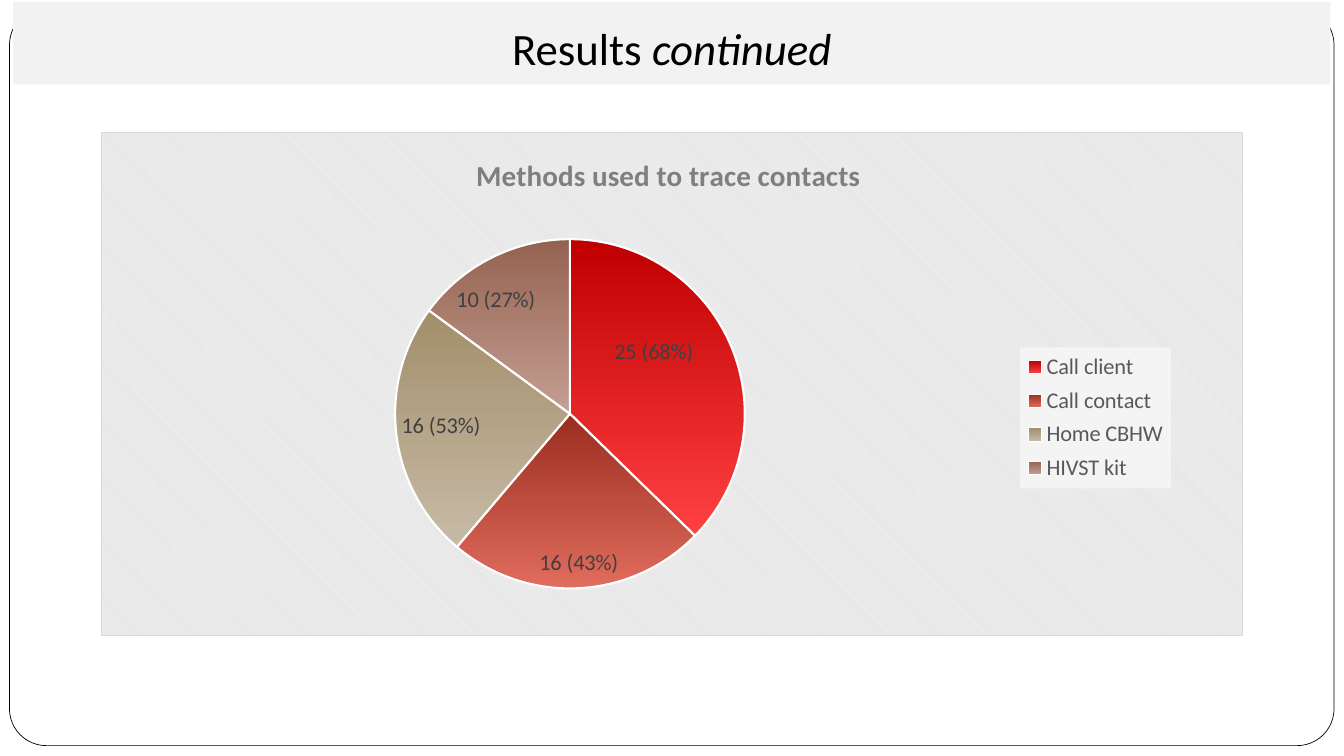
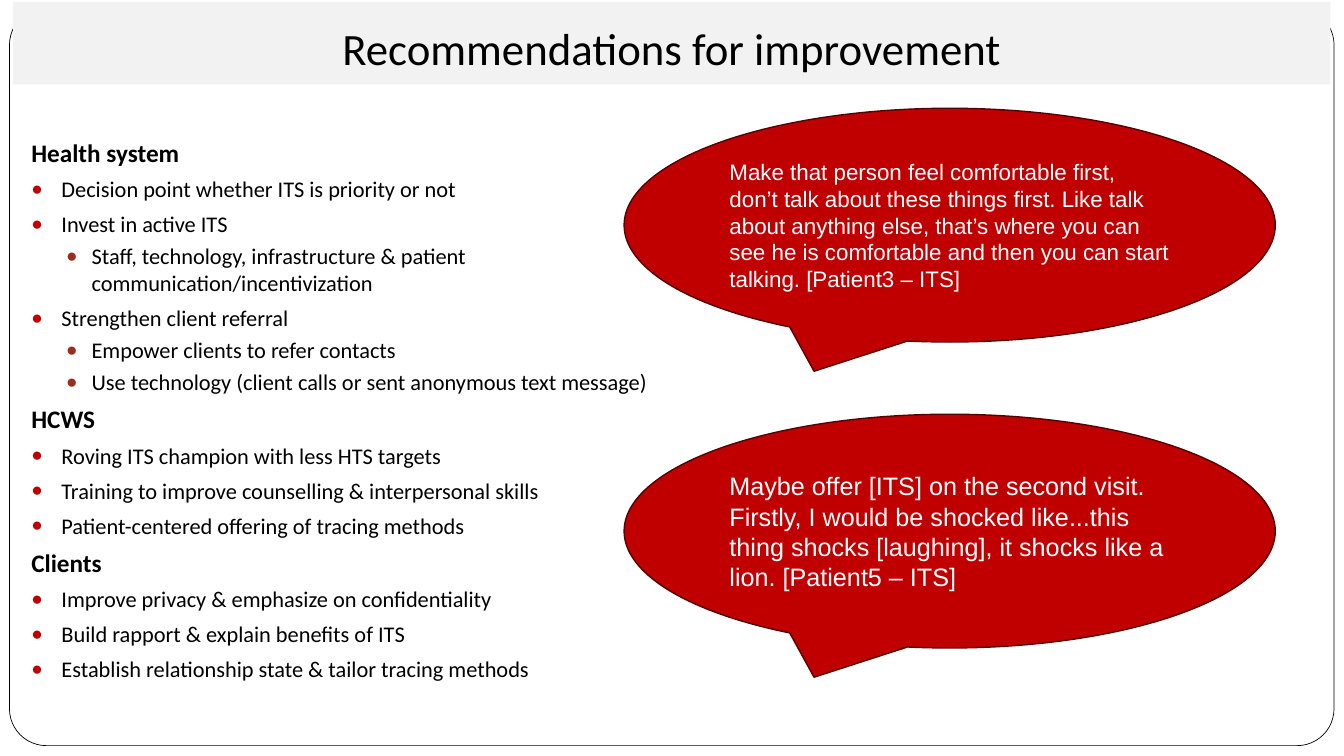
"""Build two slides on contact tracing results and recommendations."""
from dataclasses import dataclass

from lxml import etree
from pptx import Presentation
from pptx import util as u
from pptx.chart.data import CategoryChartData
from pptx.dml.color import RGBColor
from pptx.enum import chart as charts, shapes, text
from pptx.oxml import parse_xml
from pptx.oxml.ns import nsdecls, qn


@dataclass(frozen=True)
class Theme:
    font: str = "Calibri"
    quote_font: str = "Arial"
    bullet_font: str = "Arial"
    black: str = "000000"
    white: str = "FFFFFF"
    band: str = "F2F2F2"
    red: str = "C00000"
    brick: str = "9B2D1F"
    callout_line: str = "540000"
    chart_back: str = "E6E6E6"
    chart_border: str = "D9D9D9"
    chart_title: str = "7F7F7F"
    legend_back: str = "F4F4F4"
    legend_text: str = "595959"
    label_text: str = "404040"
    slices: tuple = (("C00000", "FF4040"), ("9B2D1F", "DF6C5D"),
                     ("A28E6A", "C7BBA6"), ("956251", "C49F92"))
    title_size: int = 32
    chart_title_size: float = 20.8
    heading_size: int = 18
    body_size: int = 16


def style_font(font, size, color, name, bold=False, italic=False):
    font.size, font.name = u.Pt(size), name
    font.bold, font.italic = bold, italic
    font.color.rgb = RGBColor.from_string(color)


def add_run(p, content, **fmt):
    r = p.add_run()
    r.text = content
    style_font(r.font, **fmt)


def add_bullet(p, font, color, left, hanging):
    pPr = p._p.get_or_add_pPr()
    pPr.set("marL", str(u.Cm(left)))
    pPr.set("indent", str(-u.Cm(hanging)))
    bu_color = etree.SubElement(pPr, qn("a:buClr"))
    etree.SubElement(bu_color, qn("a:srgbClr")).set("val", color)
    etree.SubElement(pPr, qn("a:buSzPct")).set("val", "85000")
    etree.SubElement(pPr, qn("a:buFont")).set("typeface", font)
    etree.SubElement(pPr, qn("a:buChar")).set("char", "●")


def place(parent, size, after=None, inner=False, edge=True, **lengths):
    for old in parent.findall(qn("c:layout")):
        parent.remove(old)
    layout = etree.Element(qn("c:layout"))
    manual = etree.SubElement(layout, qn("c:manualLayout"))
    if inner:
        etree.SubElement(manual, qn("c:layoutTarget")).set("val", "inner")
    if edge:
        for mode in ("xMode", "yMode"):
            etree.SubElement(manual, qn(f"c:{mode}")).set("val", "edge")
    for key, value in lengths.items():
        fraction = value / size[key in "yh"]
        etree.SubElement(manual, qn(f"c:{key}")).set("val", f"{fraction:.4f}")
    if after:
        parent.find(qn(after)).addnext(layout)
    else:
        parent.insert(0, layout)


def chart_fill(content):
    return parse_xml(f'<c:spPr {nsdecls("c", "a")}>{content}</c:spPr>')


def rgb_xml(color):
    return f'<a:srgbClr val="{color}"/>'


class Deck:
    def __init__(self, theme):
        self.theme = theme
        self.prs = Presentation()
        self.prs.slide_width, self.prs.slide_height = u.Cm(33.87), u.Cm(19.05)
        self.s = None

    def shape(self, kind, box, fill, line=None, width=0.5):
        sp = self.s.shapes.add_shape(kind, *map(u.Cm, box))
        sp.shadow.inherit = False
        sp.fill.solid()
        sp.fill.fore_color.rgb = RGBColor.from_string(fill)
        if line:
            sp.line.color.rgb = RGBColor.from_string(line)
            sp.line.width = u.Pt(width)
        else:
            sp.line.fill.background()
        sp.text_frame.word_wrap = True
        return sp

    def slide(self, title, emphasis=None):
        t = self.theme
        self.s = self.prs.slides.add_slide(self.prs.slide_layouts[6])
        frame = self.shape(shapes.MSO_SHAPE.ROUNDED_RECTANGLE,
                           (0.24, 0.2, 33.38, 18.59), t.white, t.black)
        frame.adjustments[0] = 0.05
        tf = self.shape(shapes.MSO_SHAPE.RECTANGLE,
                        (0.33, 0.05, 33.2, 2.08), t.band).text_frame
        tf.vertical_anchor = text.MSO_ANCHOR.BOTTOM
        tf.margin_bottom = u.Cm(0.25)
        p = tf.paragraphs[0]
        p.alignment = text.PP_ALIGN.CENTER
        fmt = dict(size=t.title_size, color=t.black, name=t.font)
        add_run(p, title, **fmt)
        if emphasis:
            add_run(p, emphasis, italic=True, **fmt)

    def outline(self, box, sections):
        t = self.theme
        tf = self.s.shapes.add_textbox(*map(u.Cm, box)).text_frame
        tf.word_wrap = True
        levels = {1: (t.red, 0.76, 0.76), 2: (t.brick, 1.52, 0.64)}
        rows = [row for heading, items in sections
                for row in [(0, heading), *items]]
        for i, (level, content) in enumerate(rows):
            p = tf.add_paragraph() if i else tf.paragraphs[0]
            p.space_before = u.Pt((3.7 if level == 2 else 5.8) if i else 0)
            if level:
                add_bullet(p, t.bullet_font, *levels[level])
            add_run(p, content, size=t.body_size if level else t.heading_size,
                    color=t.black, name=t.font, bold=not level)

    def callout(self, top, content, size):
        t = self.theme
        tf = self.shape(shapes.MSO_SHAPE.OVAL_CALLOUT,
                        (15.73, top, 16.41, 5.89), t.red,
                        t.callout_line, 1).text_frame
        tf.vertical_anchor = text.MSO_ANCHOR.MIDDLE
        p = tf.paragraphs[0]
        p.alignment = text.PP_ALIGN.LEFT
        add_run(p, content, size=size, color=t.white, name=t.quote_font)

    def pie(self, box, title, rows):
        t = self.theme
        size = box[2:]
        data = CategoryChartData()
        data.categories = [name for name, _, _ in rows]
        data.add_series("Series 1", [value for _, value, _ in rows])
        chart = self.s.shapes.add_chart(
            charts.XL_CHART_TYPE.PIE, *map(u.Cm, box), data).chart
        style_font(chart.font, 10, t.black, t.font)
        chart.has_title = True
        add_run(chart.chart_title.text_frame.paragraphs[0], title,
                size=t.chart_title_size, color=t.chart_title,
                name=t.font, bold=True)
        place(chart.chart_title._element, size, "c:tx", x=9.32, y=0.43)
        self.pie_slices(chart.plots[0], size, [label for _, _, label in rows])
        self.pie_legend(chart, size)
        root = chart._chartSpace.find(qn("c:chart"))
        place(root.find(qn("c:plotArea")), size, inner=True,
              x=7.41, y=2.69, w=8.82, h=8.82)
        root.addnext(chart_fill(
            f'<a:pattFill prst="dkDnDiag"><a:fgClr>{rgb_xml(t.white)}</a:fgClr>'
            f'<a:bgClr>{rgb_xml(t.chart_back)}</a:bgClr></a:pattFill>'
            f'<a:ln w="{u.Pt(0.75)}"><a:solidFill>{rgb_xml(t.chart_border)}'
            '</a:solidFill></a:ln>'))

    def pie_slices(self, plot, size, labels):
        t = self.theme
        plot.vary_by_categories = True
        series = plot.series[0]
        best_fit = charts.XL_LABEL_POSITION.BEST_FIT
        series.data_labels.show_value = True
        series.data_labels.position = best_fit
        style_font(series.data_labels.font, t.body_size, t.label_text, t.font)
        for i, (label, colors) in enumerate(zip(labels, t.slices)):
            point = series.points[i]
            fill = point.format.fill
            fill.gradient()
            fill.gradient_angle = 270
            for stop, color in zip(fill.gradient_stops, colors):
                stop.color.rgb = RGBColor.from_string(color)
            point.format.line.color.rgb = RGBColor.from_string(t.white)
            point.format.line.width = u.Pt(1.5)
            tf = point.data_label.text_frame
            add_run(tf.paragraphs[0], label, size=t.body_size,
                    color=t.label_text, name=t.font)
            point.data_label.position = best_fit
        first = series.points[0].data_label
        first.position = charts.XL_LABEL_POSITION.CENTER
        place(first._get_or_add_dLbl(), size, "c:idx", edge=False,
              x=0.08, y=-0.7)

    def pie_legend(self, chart, size):
        t = self.theme
        chart.has_legend = True
        legend = chart.legend
        legend.position = charts.XL_LEGEND_POSITION.RIGHT
        legend.include_in_layout = False
        style_font(legend.font, t.body_size, t.legend_text, t.font)
        place(legend._element, size, "c:legendPos",
              x=23.18, y=5.42, w=3.8, h=3.56)
        legend._element.find(qn("c:txPr")).addprevious(chart_fill(
            f'<a:solidFill>{rgb_xml(t.legend_back)}</a:solidFill>'))


def main():
    deck = Deck(Theme())

    deck.slide("Results ", emphasis="continued")
    deck.pie((2.54, 3.33, 28.78, 12.7), "Methods used to trace contacts", [
        ("Call client", 25, "25 (68%)"),
        ("Call contact", 16, "16 (43%)"),
        ("Home CBHW", 16, "16 (53%)"),
        ("HIVST kit", 10, "10 (27%)"),
    ])

    deck.slide("Recommendations for improvement")
    deck.outline((0.54, 3.33, 16.79, 14.2), [
        ("Health system", [
            (1, "Decision point whether ITS is priority or not"),
            (1, "Invest in active ITS"),
            (2, "Staff, technology, infrastructure & patient "
                "communication/incentivization"),
            (1, "Strengthen client referral"),
            (2, "Empower clients to refer contacts"),
            (2, "Use technology (client calls or sent anonymous text message)"),
        ]),
        ("HCWS", [
            (1, "Roving ITS champion with less HTS targets"),
            (1, "Training to improve counselling & interpersonal skills"),
            (1, "Patient-centered offering of tracing methods"),
        ]),
        ("Clients", [
            (1, "Improve privacy & emphasize on confidentiality"),
            (1, "Build rapport & explain benefits of ITS"),
            (1, "Establish relationship state & tailor tracing methods"),
        ]),
    ])
    deck.callout(2.73, "Make that person feel comfortable first, don’t talk "
                 "about these things first. Like talk about anything else, "
                 "that’s where you can see he is comfortable and then you can "
                 "start talking. [Patient3 – ITS]", size=16)
    deck.callout(10.44, "Maybe offer [ITS] on the second visit. Firstly, I "
                 "would be shocked like...this thing shocks [laughing], it "
                 "shocks like a lion. [Patient5 – ITS]", size=18)

    deck.prs.save("out.pptx")


if __name__ == "__main__":
    main()
